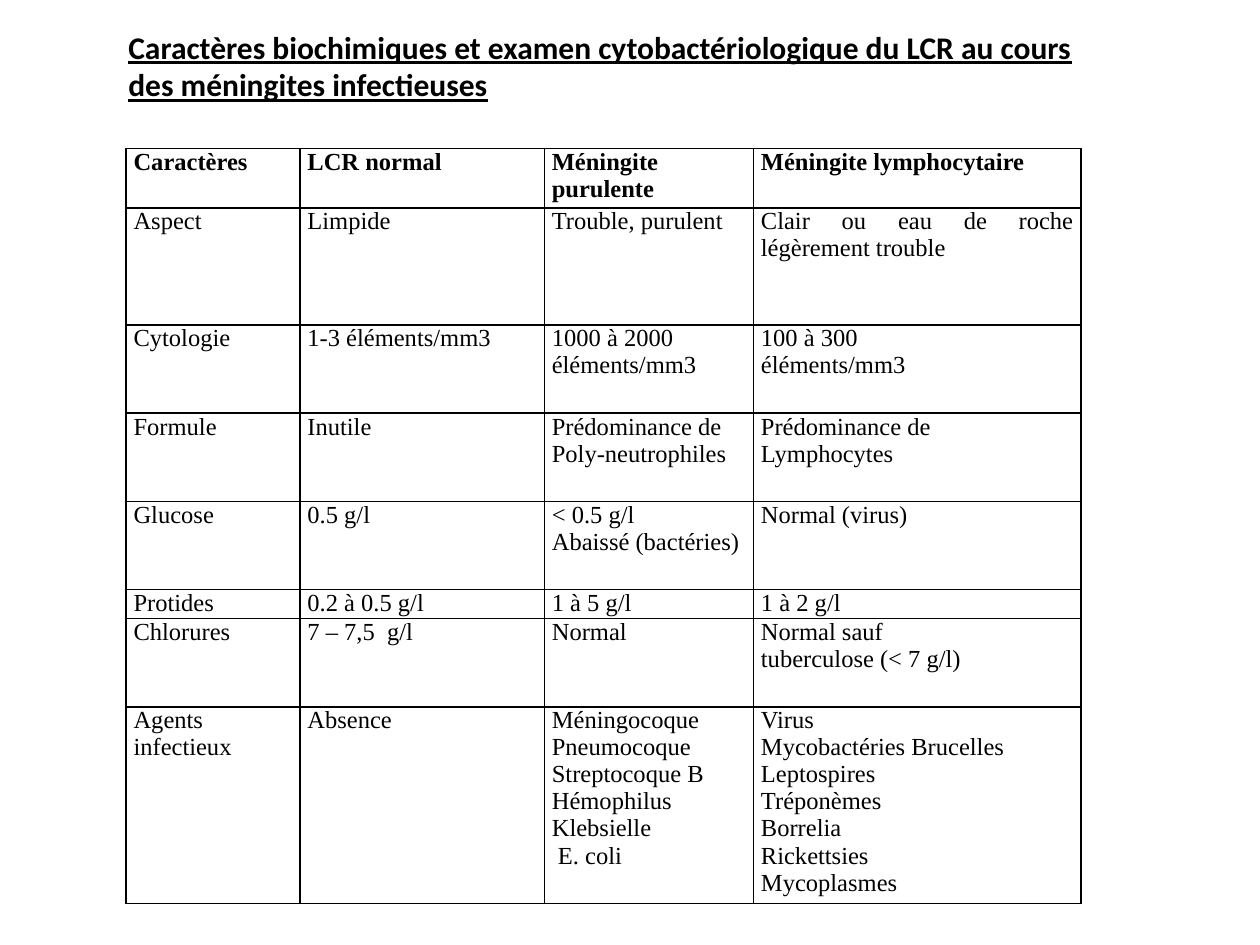
from dataclasses import dataclass
from pptx import Presentation, util as u
from pptx.dml import color
from pptx.enum import text
from pptx.oxml import parse_xml
from pptx.oxml.ns import nsdecls

INK = "000000"
SERIF = "Times New Roman"
COLS = [1.38, 1.94, 1.66, 2.6]


@dataclass
class Row:
    high: float
    cells: list[str]
    bold: bool = False


ROWS = [
    Row(0.47, ["Caractères", "LCR normal", "Méningite purulente",
               "Méningite lymphocytaire"], True),
    Row(0.93, ["Aspect", "Limpide", "Trouble, purulent",
               "Clair ou eau de roche légèrement trouble"]),
    Row(0.7, ["Cytologie", "1-3 éléments/mm3", "1000 à 2000 éléments/mm3",
              "100 à 300\néléments/mm3"]),
    Row(0.7, ["Formule", "Inutile", "Prédominance de Poly-neutrophiles",
              "Prédominance de\nLymphocytes"]),
    Row(0.7, ["Glucose", "0.5 g/l", "< 0.5 g/l\nAbaissé (bactéries)",
              "Normal (virus)"]),
    Row(0.23, ["Protides", "0.2 à 0.5 g/l", "1 à 5 g/l", "1 à 2 g/l"]),
    Row(0.7, ["Chlorures", "7 – 7,5  g/l", "Normal",
              "Normal sauf\ntuberculose (< 7 g/l)"]),
    Row(1.56, ["Agents\ninfectieux", "Absence",
               "Méningocoque Pneumocoque Streptocoque B\n"
               "Hémophilus Klebsielle\n E. coli",
               "Virus\nMycobactéries Brucelles Leptospires\nTréponèmes\n"
               "Borrelia\nRickettsies\nMycoplasmes"]),
]


def paint(font, tone: str) -> None:
    font.color.rgb = color.RGBColor.from_string(tone)


def write(frame, words: str, face: str, size: int, bold: bool,
          under: bool = False) -> None:
    for n, line in enumerate(words.split("\n")):
        para = frame.add_paragraph() if n else frame.paragraphs[0]
        run = para.add_run()
        run.text = line
        font = run.font
        font.name, font.size = face, u.Pt(size)
        font.bold, font.underline = bold, under
        paint(font, INK)


def edge(cell) -> None:
    props = cell._tc.get_or_add_tcPr()
    for side in "LRTB":
        props.append(parse_xml(
            f'<a:ln{side} {nsdecls("a")} w="{u.Pt(1)}"><a:solidFill>'
            f'<a:srgbClr val="{INK}"/></a:solidFill></a:ln{side}>'))


def fill_cell(cell, words: str, bold: bool) -> None:
    cell.margin_left = cell.margin_right = u.Inches(0.06)
    cell.margin_top = cell.margin_bottom = 0
    edge(cell)
    cell.fill.background()
    write(cell.text_frame, words, SERIF, 14, bold)


def add_title(slide) -> None:
    box = slide.shapes.add_textbox(u.Inches(0.92), u.Inches(0.17),
                                   u.Inches(7.75), u.Inches(0.71))
    frame = box.text_frame
    frame.word_wrap = True
    frame.auto_size = text.MSO_AUTO_SIZE.SHAPE_TO_FIT_TEXT
    write(frame, "Caractères biochimiques et examen cytobactériologique "
          "du LCR au cours des méningites infectieuses",
          "Calibri", 18, True, True)


def add_grid(slide) -> None:
    high = sum(row.high for row in ROWS)
    grid = slide.shapes.add_table(
        len(ROWS), len(COLS), u.Inches(1), u.Inches(1.18),
        u.Inches(sum(COLS)), u.Inches(high)).table
    grid.first_row = grid.horz_banding = False
    for col, wide in zip(grid.columns, COLS):
        col.width = u.Inches(wide)
    for line, row in zip(grid.rows, ROWS):
        line.height = u.Inches(row.high)
        for cell, words in zip(line.cells, row.cells):
            fill_cell(cell, words, row.bold)
    clear = grid.cell(1, 3).text_frame.paragraphs[0]
    clear.alignment = text.PP_ALIGN.JUSTIFY


def main() -> None:
    deck = Presentation()
    deck.slide_width, deck.slide_height = u.Inches(10), u.Inches(7.5)
    slide = deck.slides.add_slide(deck.slide_layouts[6])
    add_grid(slide)
    add_title(slide)
    deck.save("out.pptx")


if __name__ == "__main__":
    main()
